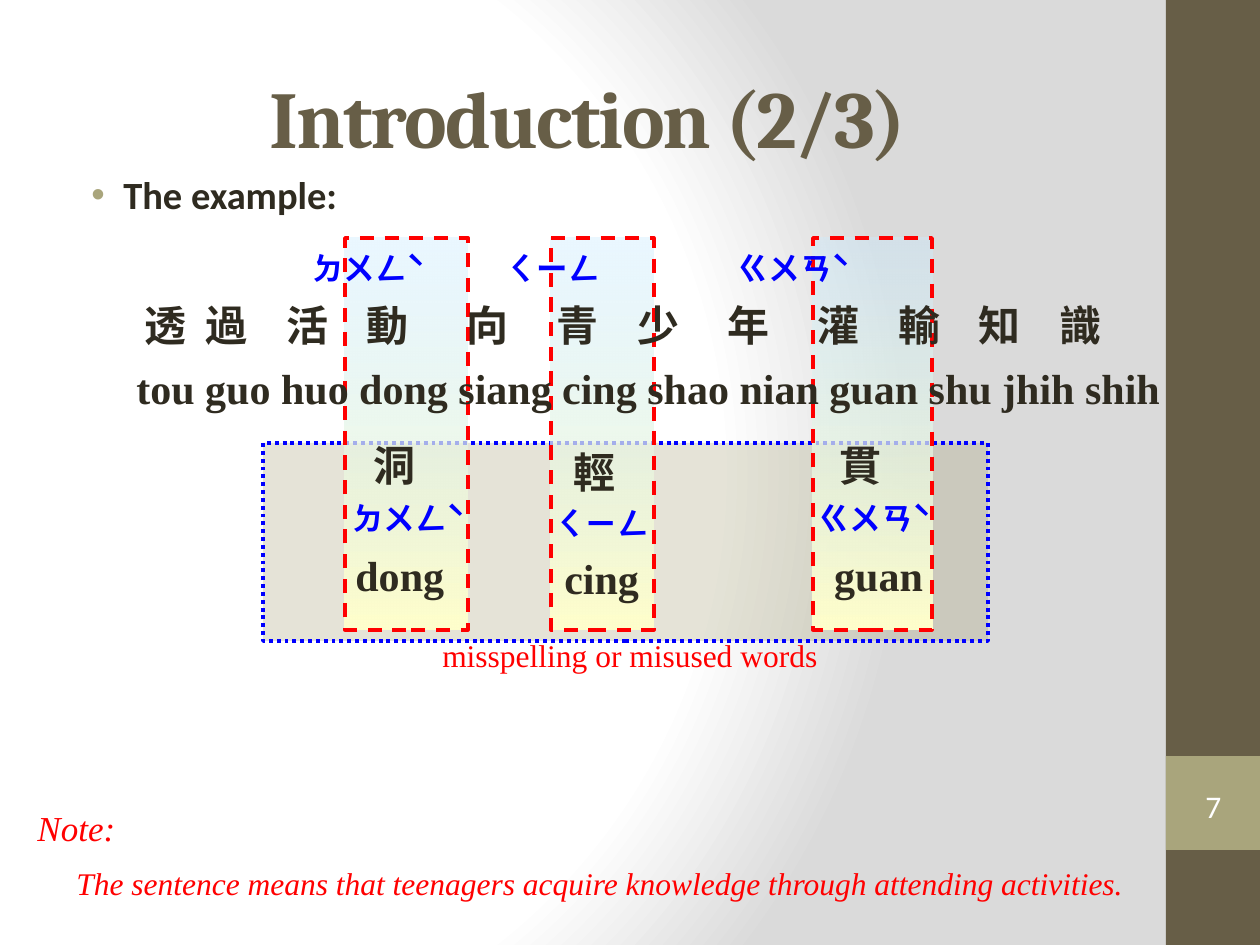
from pptx import Presentation
from pptx import util as u
from pptx.dml.color import RGBColor
from pptx.enum import dml, shapes, text
from pptx.oxml import parse_xml
from pptx.oxml.ns import nsdecls, qn

COLORS = {
    "brown": "675E47", "olive": "A9A57C", "ink": "2F2B20", "white": "FFFFFF",
    "gray": "DADADA", "blue": "0000FF", "red": "FF0000", "sky": "CCECFF",
    "cream": "FFFFCC",
}
SERIF = "Times New Roman"
ALIGN = text.PP_ALIGN
SPACE_WIDTH = 0.23  # of the text size


def px(length):
    return u.Emu(round(length * 914400 / 126))


def color(name):
    return RGBColor.from_string(COLORS[name])


def add_xml(parent, body):
    """Append one DrawingML element written without its namespace."""
    tag, rest = body[1:].split(" ", 1)
    parent.append(parse_xml(f"<{tag} {nsdecls('a')} {rest}"))


def set_gradient(fill, owner, stops, direction):
    """Stops are (position, colour, opacity), all in percent."""
    fill.gradient()
    old = next(owner.iter(qn("a:gradFill")))
    marks = "".join(
        f'<a:gs pos="{position * 1000}"><a:srgbClr val="{COLORS[name]}">'
        f'<a:alpha val="{opacity * 1000}"/></a:srgbClr></a:gs>'
        for position, name, opacity in stops)
    old.getparent().replace(old, parse_xml(
        f'<a:gradFill {nsdecls("a")} rotWithShape="1">'
        f"<a:gsLst>{marks}</a:gsLst>{direction}</a:gradFill>"))


def add_block(parts, box, fill=None, line=None, width=0, dash=None,
              kind=shapes.MSO_SHAPE.RECTANGLE):
    shape = parts.add_shape(kind, *map(px, box))
    shape.shadow.inherit = False
    if fill:
        shape.fill.solid()
        shape.fill.fore_color.rgb = color(fill)
    else:
        shape.fill.background()
    if line:
        shape.line.color.rgb = color(line)
        shape.line.width = u.Pt(width)
        shape.line.dash_style = dash
    else:
        shape.line.fill.background()
    return shape


def set_spacing(run, points):
    run.font._element.set("spc", str(round(points * 100)))


def write_line(paragraph, words, size, font=SERIF, ink="ink", bold=False,
               italic=False, align=ALIGN.LEFT, before=0, margin=0, indent=0,
               bullet=None, gaps=()):
    """Gaps widen the single spaces between a list of words."""
    if gaps:
        for word, gap in zip(words, (*gaps, None)):
            paragraph.add_run().text = word
            if gap:
                space = paragraph.add_run()
                space.text = " "
                set_spacing(space, (gap - 1) * size * SPACE_WIDTH)
    else:
        paragraph.text = words
    paragraph.alignment = align
    properties = paragraph._p.get_or_add_pPr()
    properties.set("marL", str(px(margin)))
    properties.set("indent", str(px(indent)))
    add_xml(properties, f'<a:spcBef ><a:spcPct val="{before * 1000}"/></a:spcBef>')
    if bullet:
        add_xml(properties, f'<a:buClr ><a:srgbClr val="{COLORS[bullet]}"/></a:buClr>')
        add_xml(properties, '<a:buFont typeface="Arial"/>')
        add_xml(properties, '<a:buChar char="•"/>')
    for run in paragraph.runs:
        run.font.size, run.font.name = u.Pt(size), font
        run.font.bold, run.font.italic = bold, italic
        run.font.color.rgb = color(ink)


def add_text(parts, box, lines, anchor=text.MSO_ANCHOR.TOP):
    shape = parts.add_textbox(*map(px, box))
    frame = shape.text_frame
    frame.word_wrap = True
    frame.vertical_anchor = anchor
    for index, line in enumerate(lines):
        paragraph = frame.add_paragraph() if index else frame.paragraphs[0]
        write_line(paragraph, **line)
    return shape


def add_sidebar(slide, box):
    left, top, width, height = box
    add_block(slide.shapes, box, "brown")
    add_block(slide.shapes, (left, top + 756, width, width), "olive")
    # Page number
    number = add_block(slide.shapes, (left + 10, top + 779, 75, 54),
                       kind=shapes.MSO_SHAPE.DOUBLE_BRACKET)
    frame = number.text_frame
    frame.margin_left = frame.margin_right = frame.margin_top = frame.margin_bottom = 0
    frame.vertical_anchor = text.MSO_ANCHOR.MIDDLE
    write_line(frame.paragraphs[0], "7", 18, "Calibri", "white", align=ALIGN.CENTER)


def add_heading(slide, box):
    left, top, width, height = box
    title = add_text(slide.shapes, box, [dict(
        words="Introduction (2/3)", size=46, font="Cambria", ink="brown",
        bold=True, align=ALIGN.CENTER)], text.MSO_ANCHOR.MIDDLE)
    set_spacing(title.text_frame.paragraphs[0].runs[0], -1)
    add_text(slide.shapes, (left, top + 127, 1134, 624), [dict(
        words="The example:", size=22, font="Calibri", bold=True, before=20,
        margin=48, indent=-32, bullet="olive")])


def add_error_panel(slide, box):
    left, top, width, height = box
    group = slide.shapes.add_group_shape()
    panel = add_block(group.shapes, box, "olive", "blue", 2.25,
                      dml.MSO_LINE.ROUND_DOT)
    tint = next(panel.fill._xPr.iter(qn("a:srgbClr")))
    add_xml(tint, '<a:alpha val="30000"/>')
    add_text(group.shapes, (left + 149, top + 187, 436, 50), [dict(
        words="misspelling or misused words", size=18, ink="red", before=50,
        align=ALIGN.CENTER)])


def add_highlight(slide, box):
    shape = add_block(slide.shapes, box, "sky", "red", 2, dml.MSO_LINE.DASH)
    set_gradient(shape.fill, shape.element,
                 [(0, "sky", 40), (100, "cream", 100)],
                 '<a:lin ang="5400000" scaled="1"/>')


def add_sentence(slide, box):
    style = dict(bold=True, before=30)
    add_text(slide.shapes, box, [
        dict(style, words=["ㄉㄨㄥˋ", "ㄑーㄥ", "ㄍㄨㄢˋ"], size=18, font="Arial",
             ink="blue", margin=187, gaps=(11, 19)),
        dict(style, words="透過活動向青少年灌輸知識", size=24, margin=19,
             gaps=(2, 4, 4, 6, 5, 4, 5, 5, 4, 4, 4)),
        dict(style, words="tou guo huo dong siang cing shao nian guan shu jhih shih",
             size=24, margin=11)])


def add_wrong_word(slide, box, words, margins, before=30, font="Arial",
                   last_align=ALIGN.LEFT):
    styles = [dict(size=24), dict(size=18, font=font, ink="blue"),
              dict(size=24, align=last_align)]
    add_text(slide.shapes, box, [
        dict(style, words=word, margin=margin, before=before, bold=True)
        for style, word, margin in zip(styles, words, margins)])


def add_note(slide, box):
    style = dict(ink="red", italic=True, before=50)
    add_text(slide.shapes, box, [
        dict(style, words="Note:", size=20),
        dict(style, size=18, margin=39,
             words="The sentence means that teenagers acquire knowledge "
                   "through attending activities.")])


def main():
    presentation = Presentation()
    presentation.slide_width, presentation.slide_height = px(1260), px(945)
    slide = presentation.slides.add_slide(presentation.slide_layouts[6])
    set_gradient(slide.background.fill, slide.element,
                 [(0, "white", 100), (75, "white", 100), (100, "gray", 100)],
                 '<a:path path="circle"><a:fillToRect l="20000" t="50000" '
                 'r="100000" b="50000"/></a:path>')

    add_sidebar(slide, (1166, 0, 94, 945))
    add_heading(slide, (63, 38, 1050, 157))
    add_error_panel(slide, (263, 443, 725, 198))
    for left, width in ((551, 103), (813, 119), (345, 123)):
        add_highlight(slide, (left, 238, width, 392))
    add_sentence(slide, (113, 243, 1063, 197))

    # Wrong words below the characters they replace
    add_wrong_word(slide, (333, 433, 159, 195), ("洞", "ㄉㄨㄥˋ", "dong"), (28, 7, 10))
    add_wrong_word(slide, (542, 440, 129, 174), ("輕", "ㄑㄧㄥ", "cing"), (19, 0, 10),
                   before=25, font=SERIF)
    add_wrong_word(slide, (799, 433, 159, 195), ("貫", "ㄍㄨㄢˋ", "guan"), (28, 7, 0),
                   last_align=ALIGN.CENTER)
    add_note(slide, (25, 800, 1201, 112))
    presentation.save("out.pptx")


if __name__ == "__main__":
    main()
